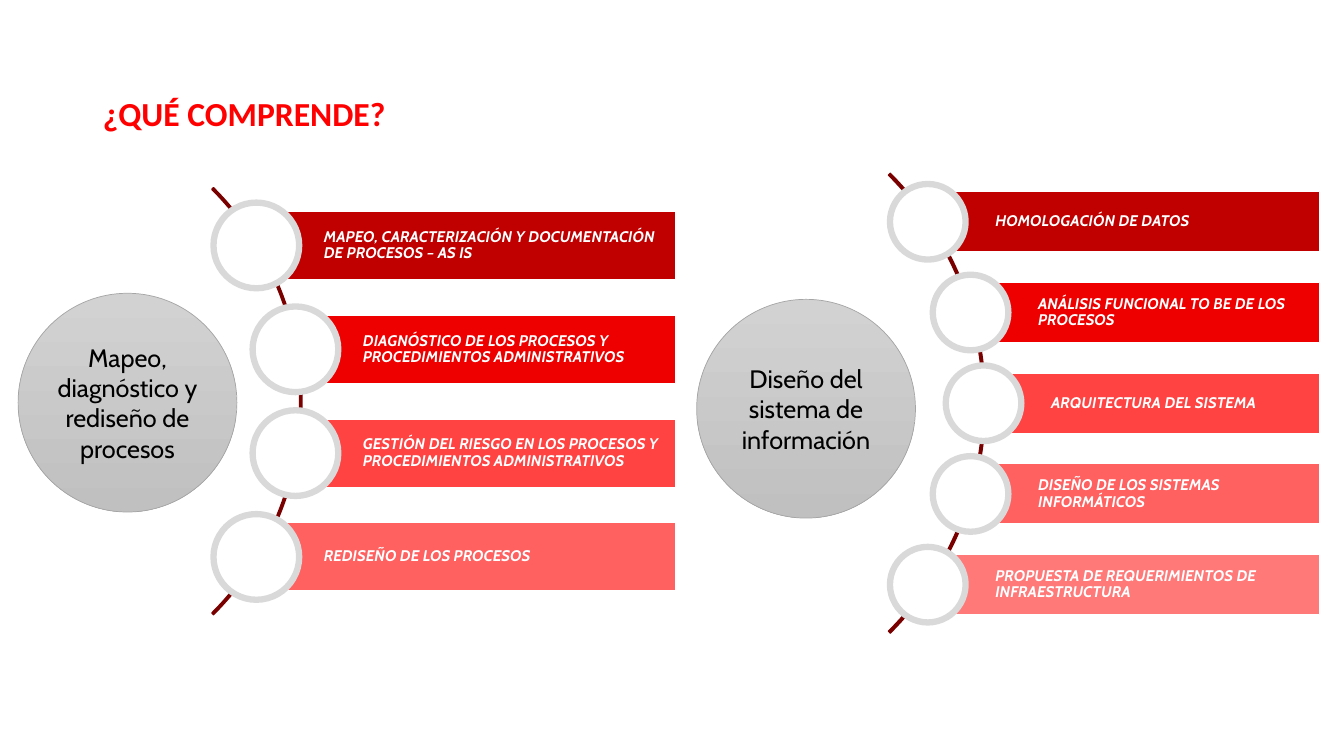
import math

import pptx
import pptx.dml.color
import pptx.enum.shapes
import pptx.enum.text
import pptx.util

Inches = pptx.util.Inches
Pt = pptx.util.Pt
Shape = pptx.enum.shapes.MSO_SHAPE
Align = pptx.enum.text.PP_ALIGN
Anchor = pptx.enum.text.MSO_ANCHOR

COLORS = {
    "title": "FF0000", "arc": "7A0000", "white": "FFFFFF", "black": "000000",
    "ring": "D9D9D9", "hub_top": "D2D2D2", "hub_bottom": "C0C0C0", "hub_line": "A5A5A5",
    "bar_1": "C00000", "bar_2": "EE0000", "bar_3": "FF4343", "bar_4": "FF6161",
    "bar_5": "FF7979",
}


def color(name):
    return pptx.dml.color.RGBColor.from_string(COLORS[name])


class ProcessSlide:
    font = "Cabin"
    inset = 0.04

    def __init__(self, deck):
        self.page = deck.slides.add_slide(deck.slide_layouts[5])

    def shape(self, kind, left, top, width, height, fill, line, weight):
        box = self.page.shapes.add_shape(
            kind, Inches(left), Inches(top), Inches(width), Inches(height))
        box.shadow.inherit = False
        if fill:
            box.fill.solid()
            box.fill.fore_color.rgb = color(fill)
        box.line.color.rgb = color(line)
        box.line.width = Pt(weight)
        return box

    def add_text(self, box, text, size, ink, font=None, align=Align.LEFT,
                 bold=False, italic=False):
        frame = box.text_frame
        frame.word_wrap = True
        frame.vertical_anchor = Anchor.MIDDLE
        para = frame.paragraphs[0]
        para.alignment = align
        span = para.add_run()
        span.text = text
        span.font.name = font or self.font
        span.font.size = Pt(size)
        span.font.bold = bold
        span.font.italic = italic
        span.font.color.rgb = color(ink)
        return para

    def set_insets(self, box, left):
        frame = box.text_frame
        frame.margin_left = Inches(left)
        frame.margin_top = frame.margin_right = frame.margin_bottom = Inches(self.inset)

    def title(self, text):
        box = self.page.shapes.title
        box.left, box.top = Inches(0.92), Inches(0.4)
        box.width, box.height = Inches(11.5), Inches(1.45)
        self.add_text(box, text, 24, "title", font="Calibri", bold=True)

    def arc(self, center_x, center_y, size):
        box = self.shape(Shape.BLOCK_ARC, center_x - size / 2, center_y - size / 2,
                         size, size, "arc", "arc", 1)
        # Angles from 315 to 45 degrees, then the band thickness
        for index, value in enumerate((189, 27, 0.004)):
            box.adjustments[index] = value

    def bar(self, left, middle, right, height, fill, text):
        box = self.shape(Shape.RECTANGLE, left, middle - height / 2,
                         right - left, height, fill, "white", 1)
        self.set_insets(box, 0.67)
        para = self.add_text(box, text, 11, "white", bold=True, italic=True)
        para.line_spacing = 0.9

    def ring(self, center_x, center_y, size):
        self.shape(Shape.OVAL, center_x - size / 2, center_y - size / 2,
                   size, size, "white", "ring", 4.5)

    def hub(self, left, top, text):
        box = self.shape(Shape.OVAL, left, top, 2.17, 2.17, None, "hub_line", 0.5)
        box.fill.gradient()
        box.fill.gradient_angle = 270
        for position, name in enumerate(("hub_top", "hub_bottom")):
            stop = box.fill.gradient_stops[position]
            stop.color.rgb = color(name)
            stop.position = position
        self.set_insets(box, self.inset)
        self.add_text(box, text, 18, "black", align=Align.CENTER)

    def fan(self, center_x, center_y, size, step, right, bar_height, ring_size, labels):
        """Bars and rings evenly stacked, each starting on the arc."""
        self.arc(center_x, center_y, size)
        radius = size / 2 - 0.02
        for index, label in enumerate(labels):
            offset = (index - (len(labels) - 1) / 2) * step
            left = center_x + math.sqrt(radius ** 2 - offset ** 2)
            middle = center_y + offset
            self.bar(left, middle, right, bar_height, f"bar_{index + 1}", label)
            self.ring(left, middle, ring_size)


def main():
    deck = pptx.Presentation()
    deck.slide_width, deck.slide_height = Inches(13.33), Inches(7.5)
    slide = ProcessSlide(deck)
    slide.title("¿QUÉ COMPRENDE?")

    # Left: process mapping
    slide.fan(0, 3.98, 5.99, 1.03, 6.7, 0.68, 0.85, [
        "MAPEO, CARACTERIZACIÓN Y DOCUMENTACIÓN DE PROCESOS – AS IS",
        "DIAGNÓSTICO DE LOS PROCESOS Y PROCEDIMIENTOS ADMINISTRATIVOS",
        "GESTIÓN DEL RIESGO EN LOS PROCESOS Y PROCEDIMIENTOS ADMINISTRATIVOS",
        "REDISEÑO DE LOS PROCESOS",
    ])
    slide.hub(0.18, 2.91, "Mapeo, diagnóstico y rediseño de procesos")

    # Right: information system design
    slide.fan(6.55, 4, 6.45, 0.9, 13.09, 0.6, 0.75, [
        "HOMOLOGACIÓN DE DATOS",
        "ANÁLISIS FUNCIONAL TO BE DE LOS PROCESOS",
        "ARQUITECTURA DEL SISTEMA",
        "DISEÑO DE LOS SISTEMAS INFORMÁTICOS",
        "PROPUESTA DE REQUERIMIENTOS DE INFRAESTRUCTURA",
    ])
    slide.hub(6.91, 2.97, "Diseño del sistema de información")

    deck.save("out.pptx")


if __name__ == "__main__":
    main()
